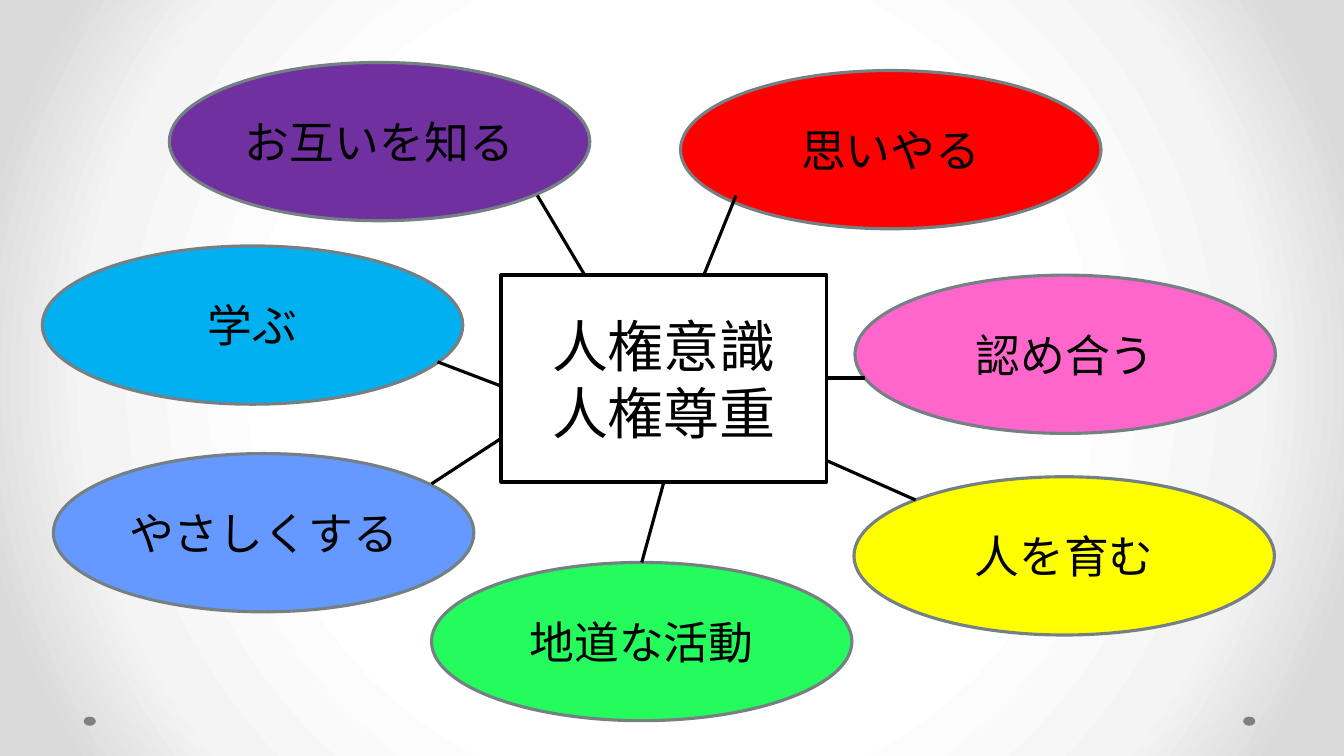
from dataclasses import dataclass

from lxml import etree
from pptx import Presentation
from pptx import util as u
from pptx.dml.color import RGBColor
from pptx.enum import shapes, text
from pptx.oxml import parse_xml
from pptx.oxml.ns import nsdecls, qn


@dataclass(frozen=True)
class Theme:
    font: str = "Noto Sans CJK JP"
    ink: str = "000000"
    paper: str = "FFFFFF"
    outline: str = "758085"
    dot: str = "808080"
    backdrop: tuple = ((0, "FFFFFF"), (50, "FFFFFF"), (76, "F4F4F4"),
                       (92, "DADADA"), (100, "DADADA"))
    core_size: int = 40
    idea_size: int = 32
    core_line: float = 2.5
    line: float = 2.25


THEME = Theme()
WIDTH, HEIGHT = 13.33, 7.5
CORE_BOX = (4.97, 2.73, 3.23, 2.05)
CORE_LINES = ("人権意識", "人権尊重")
IDEA_SIZE = (4.17, 1.57)
DOT_SIZE = (0.12, 0.09)

# text, fill, left and top of the ellipse
IDEAS = (
    ("お互いを知る", "7030A0", 1.68, 0.62),
    ("思いやる", "FF0000", 6.75, 0.7),
    ("学ぶ", "00B0F0", 0.42, 2.44),
    ("認め合う", "FF66CC", 8.48, 2.73),
    ("やさしくする", "6699FF", 0.53, 4.5),
    ("人を育む", "FFFF00", 8.47, 4.73),
    ("地道な活動", "24FC5D", 4.28, 5.58),
)

# start on the core box, end on the idea's ellipse
SPOKES = (
    ((6.98, 2.73), (7.3, 1.94)),
    ((5.8, 2.73), (5.33, 1.94)),
    ((4.97, 3.83), (4.34, 3.59)),
    ((4.97, 4.35), (4.28, 4.8)),
    ((8.2, 3.75), (8.58, 3.75)),
    ((8.2, 4.57), (9.08, 4.96)),
)


def paint_backdrop(s):
    """Radial gradient, white in the middle and grey towards the corners."""
    s.background.fill.solid()
    stops = "".join(f'<a:gs pos="{pos * 1000}"><a:srgbClr val="{c}"/></a:gs>'
                    for pos, c in THEME.backdrop)
    grad = parse_xml(
        f'<a:gradFill {nsdecls("a")} rotWithShape="1"><a:gsLst>{stops}</a:gsLst>'
        '<a:path path="circle"><a:fillToRect l="50000" t="50000" r="50000" b="50000"/>'
        '</a:path></a:gradFill>')
    solid = s.element.find(".//" + qn("p:bgPr")).find(qn("a:solidFill"))
    solid.getparent().replace(solid, grad)


def add_figure(s, kind, box, fill, line=None, width=0):
    sp = s.shapes.add_shape(kind, *map(u.Inches, box))
    sp.shadow.inherit = False
    sp.fill.solid()
    sp.fill.fore_color.rgb = RGBColor.from_string(fill)
    if line:
        sp.line.color.rgb = RGBColor.from_string(line)
        sp.line.width = u.Pt(width)
    else:
        sp.line.fill.background()
    return sp


def write_label(sp, lines, size):
    tf = sp.text_frame
    tf.word_wrap = True
    tf.vertical_anchor = text.MSO_ANCHOR.MIDDLE
    tf.text = "\n".join(lines)
    for p in tf.paragraphs:
        p.alignment = text.PP_ALIGN.CENTER
        p.font.size = u.Pt(size)
        p.font.name = THEME.font
        p.font.color.rgb = RGBColor.from_string(THEME.ink)
        east_asian = etree.SubElement(p._p.pPr.find(qn("a:defRPr")), qn("a:ea"))
        east_asian.set("typeface", THEME.font)


def add_core(s, box):
    sp = add_figure(s, shapes.MSO_SHAPE.RECTANGLE, box, THEME.paper,
                    THEME.ink, THEME.core_line)
    write_label(sp, CORE_LINES, THEME.core_size)
    return sp


def add_idea(s, label, fill, left, top):
    sp = add_figure(s, shapes.MSO_SHAPE.OVAL, (left, top, *IDEA_SIZE), fill,
                    THEME.outline, THEME.line)
    write_label(sp, [label], THEME.idea_size)
    return sp


def add_spoke(s, start=(0, 0), end=(0, 0)):
    cx = s.shapes.add_connector(shapes.MSO_CONNECTOR.STRAIGHT,
                                *map(u.Inches, (*start, *end)))
    cx.line.color.rgb = RGBColor.from_string(THEME.ink)
    cx.line.width = u.Pt(THEME.line)
    etree.SubElement(cx._element.spPr, qn("a:effectLst"))
    return cx


def build_mind_map(s):
    paint_backdrop(s)
    for left in (12.33, 0.83):
        add_figure(s, shapes.MSO_SHAPE.OVAL, (left, 7.11, *DOT_SIZE), THEME.dot)
    core = add_core(s, CORE_BOX)
    ideas = [add_idea(s, *idea) for idea in IDEAS]
    stem = add_spoke(s)
    stem.begin_connect(core, 2)
    stem.end_connect(ideas[-1], 0)
    for start, end in SPOKES:
        add_spoke(s, start, end)


def main():
    prs = Presentation()
    prs.slide_width, prs.slide_height = u.Inches(WIDTH), u.Inches(HEIGHT)
    build_mind_map(prs.slides.add_slide(prs.slide_layouts[6]))
    prs.save("out.pptx")


if __name__ == "__main__":
    main()
